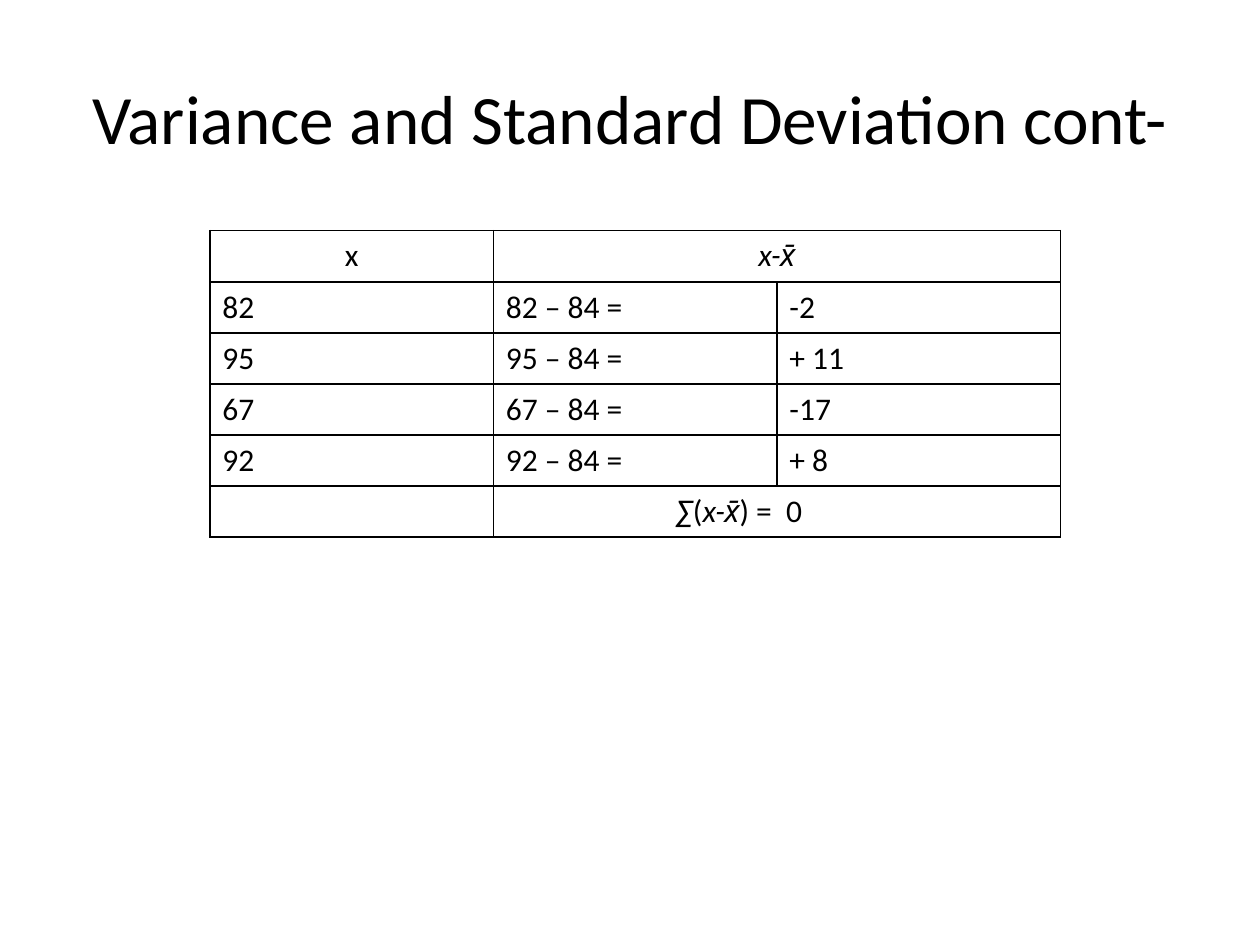
from dataclasses import dataclass

from lxml.etree import SubElement
from pptx import Presentation
from pptx.dml.color import RGBColor
from pptx.enum.text import MSO_ANCHOR, PP_ALIGN
from pptx.oxml.ns import qn
from pptx.util import Cm, Pt


@dataclass(frozen=True)
class Theme:
    font: str = "Calibri"
    ink: str = "000000"
    title_size: float = 39.6
    table_size: float = 18
    border_width: float = 1


THEME = Theme()

# Content: every cell is a list of (text, italic) runs
TITLE = "Variance and Standard Deviation cont-"
HEADER = [[("x", False)], [("x-x̄", True)]]
DEVIATIONS = [
    ("82", "82 – 84 =", "-2"),
    ("95", "95 – 84 =", "+ 11"),
    ("67", "67 – 84 =", "-17"),
    ("92", "92 – 84 =", "+ 8"),
]
SUM = [[], [("∑", True), ("(", False), ("x-x̄", True), (") =  0", False)]]
ROWS = [HEADER, *([[(text, False)] for text in row] for row in DEVIATIONS), SUM]

# Layout
TABLE_LEFT, TABLE_TOP = Cm(4.23), Cm(4.65)
COLUMN_COUNT, COLUMN_WIDTH, ROW_HEIGHT = 3, Cm(5.715), Cm(1.03)
SUM_INDENT = Cm(3.68)


def add_run(paragraph, text, size, italic=False):
    run = paragraph.add_run()
    run.text = text
    run.font.name = THEME.font
    run.font.size = Pt(size)
    run.font.italic = italic
    run.font.color.rgb = RGBColor.from_string(THEME.ink)


def add_borders(cell):
    properties = cell._tc.get_or_add_tcPr()
    for position, side in enumerate(("a:lnL", "a:lnR", "a:lnT", "a:lnB")):
        line = SubElement(properties, qn(side), w=str(Pt(THEME.border_width)))
        fill = SubElement(line, qn("a:solidFill"))
        SubElement(fill, qn("a:srgbClr"), val=THEME.ink)
        properties.insert(position, line)


def add_title(slide):
    title = slide.shapes.title
    title.left, title.top, title.width, title.height = Cm(1.27), Cm(0.76), Cm(22.86), Cm(3.18)
    title.text_frame.vertical_anchor = MSO_ANCHOR.MIDDLE
    paragraph = title.text_frame.paragraphs[0]
    paragraph.alignment = PP_ALIGN.CENTER
    add_run(paragraph, TITLE, THEME.title_size)


def add_deviation_table(slide):
    table = slide.shapes.add_table(
        len(ROWS), COLUMN_COUNT, TABLE_LEFT, TABLE_TOP,
        COLUMN_WIDTH * COLUMN_COUNT, ROW_HEIGHT * len(ROWS),
    ).table
    table.first_row = table.horz_banding = False

    # Plain bordered grid
    for cell in table.iter_cells():
        cell.fill.background()
        add_borders(cell)

    # Text; a row with two entries spans its last two columns
    for row_index, row in enumerate(ROWS):
        if len(row) < COLUMN_COUNT:
            table.cell(row_index, 1).merge(table.cell(row_index, 2))
        for column_index, runs in enumerate(row):
            paragraph = table.cell(row_index, column_index).text_frame.paragraphs[0]
            paragraph.alignment = PP_ALIGN.CENTER if row is HEADER else PP_ALIGN.LEFT
            for text, italic in runs:
                add_run(paragraph, text, THEME.table_size, italic)

    # The sum sits under the middle of the merged columns
    table.cell(len(ROWS) - 1, 1).margin_left = SUM_INDENT


def main():
    presentation = Presentation()
    presentation.slide_width, presentation.slide_height = Cm(25.4), Cm(19.05)
    slide = presentation.slides.add_slide(presentation.slide_layouts[5])
    add_title(slide)
    add_deviation_table(slide)
    presentation.save("out.pptx")


if __name__ == "__main__":
    main()
